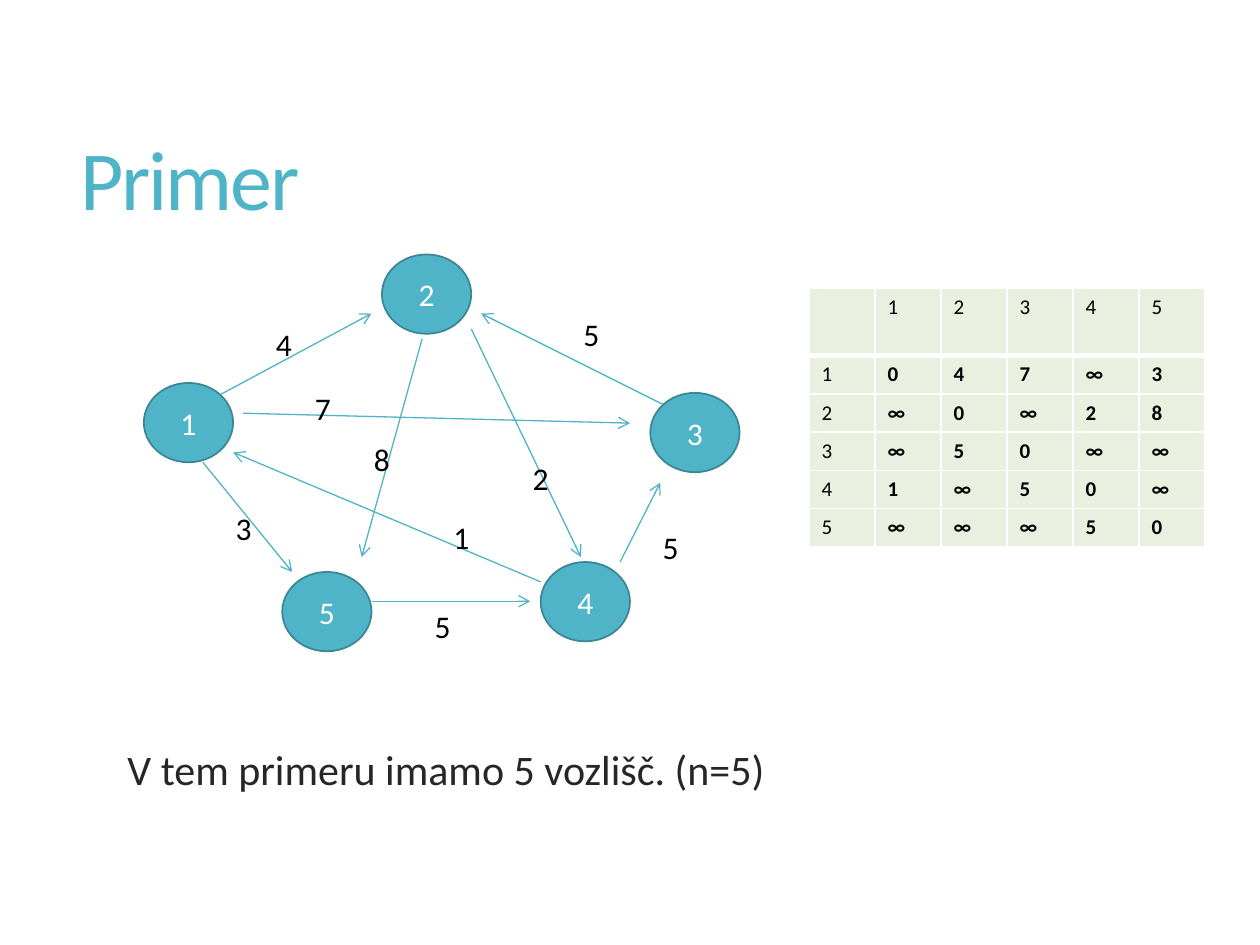
import pptx
import pptx.util
from lxml import etree
from pptx.dml.color import RGBColor
from pptx.enum.shapes import MSO_CONNECTOR, MSO_SHAPE
from pptx.enum.text import MSO_ANCHOR, MSO_AUTO_SIZE, PP_ALIGN
from pptx.oxml.ns import qn
from pptx.util import Cm

TEAL = RGBColor(0x50, 0xB4, 0xC8)
DARK_TEAL = RGBColor(0x3B, 0x85, 0x94)
PALE_GREEN = RGBColor(0xEA, 0xF0, 0xE0)
CHARCOAL = RGBColor(0x26, 0x26, 0x26)
BLACK = RGBColor(0, 0, 0)
WHITE = RGBColor(0xFF, 0xFF, 0xFF)

NODE_SIZE = (1.8, 1.6)
NODES = {1: (2.9, 7.72), 2: (7.7, 5.13), 3: (13.11, 7.92),
         4: (10.9, 11.33), 5: (5.69, 11.53)}

# (from node, to node): weight, arrow start, arrow end, label left/top/width
EDGES = {
    (1, 2): (4, (4.45, 7.95), (7.49, 6.32), (5.31, 6.43, 0.99)),
    (1, 3): (7, (4.9, 8.33), (12.7, 8.53), (6.1, 7.72, 0.91)),
    (1, 5): (3, (4.09, 9.32), (5.89, 11.53), (4.5, 10.13, 0.91)),
    (2, 4): (2, (9.5, 6.63), (11.71, 11.23), (10.49, 9.12, 0.71)),
    (2, 5): (8, (8.51, 6.83), (7.29, 11.23), (7.29, 8.74, 0.99)),
    (3, 2): (5, (13.36, 8.15), (9.7, 6.32), (11.51, 6.22, 0.99)),
    (4, 1): (1, (10.9, 11.73), (4.7, 9.12), (8.89, 10.31, 0.91)),
    (4, 3): (5, (12.5, 11.33), (13.31, 9.73), (13.11, 10.52, 0.91)),
    (5, 4): (5, (7.49, 12.12), (10.69, 12.12), (8.51, 12.12, 0.91)),
}


def set_attributes(target, values):
    for name, value in values.items():
        setattr(target, name, value)


def distance(start, end):
    """Matrix entry: zero to itself, the edge weight, or infinity."""
    if start == end:
        return "0"
    return str(EDGES[start, end][0]) if (start, end) in EDGES else "∞"


class GraphSlide:
    font_name = "Calibri"

    def __init__(self, slide):
        self.slide = slide

    def fill_text(self, frame, text, size, color, bold=False, spacing=None,
                  **paragraph_format):
        paragraph = frame.paragraphs[0]
        set_attributes(paragraph, paragraph_format)
        run = paragraph.add_run()
        run.text = text
        set_attributes(run.font, {"name": self.font_name, "bold": bold,
                                  "size": pptx.util.Pt(size)})
        run.font.color.rgb = color
        if spacing is not None:
            run._r.get_or_add_rPr().set("spc", str(spacing))

    def text(self, box, text, size, color, frame_format=None, **text_format):
        shape = self.slide.shapes.add_textbox(*map(Cm, box))
        set_attributes(shape.text_frame, {"word_wrap": True, **(frame_format or {})})
        self.fill_text(shape.text_frame, text, size, color, **text_format)

    def node(self, number, position):
        shape = self.slide.shapes.add_shape(MSO_SHAPE.OVAL, *map(Cm, position + NODE_SIZE))
        shape.shadow.inherit = False
        shape.fill.solid()
        shape.fill.fore_color.rgb = TEAL
        shape.line.color.rgb = DARK_TEAL
        shape.line.width = pptx.util.Pt(1)
        shape.text_frame.vertical_anchor = MSO_ANCHOR.MIDDLE
        self.fill_text(shape.text_frame, str(number), 18, WHITE, alignment=PP_ALIGN.CENTER)

    def arrow(self, start, end):
        connector = self.slide.shapes.add_connector(
            MSO_CONNECTOR.STRAIGHT, *map(Cm, start + end))
        connector.line.color.rgb = TEAL
        connector.line.width = pptx.util.Pt(0.75)
        properties = connector._element.spPr
        etree.SubElement(properties.find(qn("a:ln")), qn("a:tailEnd"), type="arrow")
        etree.SubElement(properties, qn("a:effectLst"))

    def borders(self, cell, widths):
        """Give a cell white borders; widths maps the sides L, R, T, B to points."""
        properties = cell._tc.get_or_add_tcPr()
        for index, (side, width) in enumerate(widths.items()):
            line = etree.Element(qn(f"a:ln{side}"), w=str(int(pptx.util.Pt(width))))
            fill = etree.SubElement(line, qn("a:solidFill"))
            etree.SubElement(fill, qn("a:srgbClr"), val=str(WHITE))
            properties.insert(index, line)

    def matrix(self, left, top, column_width, header_height, row_height):
        numbers = list(NODES)
        rows = [[""] + [str(number) for number in numbers]]
        rows += [[str(start)] + [distance(start, end) for end in numbers]
                 for start in numbers]
        count = len(rows)
        table = self.slide.shapes.add_table(
            count, count, Cm(left), Cm(top), Cm(column_width * count),
            Cm(header_height + row_height * len(numbers))).table
        for column in table.columns:
            column.width = Cm(column_width)
        for row_index, values in enumerate(rows):
            table.rows[row_index].height = Cm(row_height if row_index else header_height)
            for column_index, value in enumerate(values):
                cell = table.cell(row_index, column_index)
                cell.fill.solid()
                cell.fill.fore_color.rgb = PALE_GREEN
                self.borders(cell, {"L": 1, "R": 1, "T": 3 if row_index == 1 else 1,
                                    "B": 3 if row_index == 0 else 1})
                if value:
                    self.fill_text(cell.text_frame, value, 12, BLACK,
                                   bold=row_index > 0 and column_index > 0)


def main():
    presentation = pptx.Presentation()
    set_attributes(presentation, {"slide_width": Cm(25.4), "slide_height": Cm(19.05)})
    graph = GraphSlide(presentation.slides.add_slide(presentation.slide_layouts[6]))

    graph.text((1.37, 1.4, 22.45, 4.6), "Primer", 48, TEAL,
               {"vertical_anchor": MSO_ANCHOR.MIDDLE}, spacing=-120, line_spacing=0.9)
    graph.text((2.01, 13.67, 22.86, 3.63), "V tem primeru imamo 5 vozlišč. (n=5)",
               24, CHARCOAL, {"margin_left": Cm(0.56), "margin_top": Cm(1.47)},
               line_spacing=0.85)
    for number, position in NODES.items():
        graph.node(number, position)
    for _, start, end, _ in EDGES.values():
        graph.arrow(start, end)
    for weight, _, _, label in EDGES.values():
        graph.text(label + (1.02,), str(weight), 18, BLACK,
                   {"auto_size": MSO_AUTO_SIZE.SHAPE_TO_FIT_TEXT})
    graph.matrix(16.31, 5.82, 1.33, 1.35, 0.77)
    presentation.save("out.pptx")


if __name__ == "__main__":
    main()
